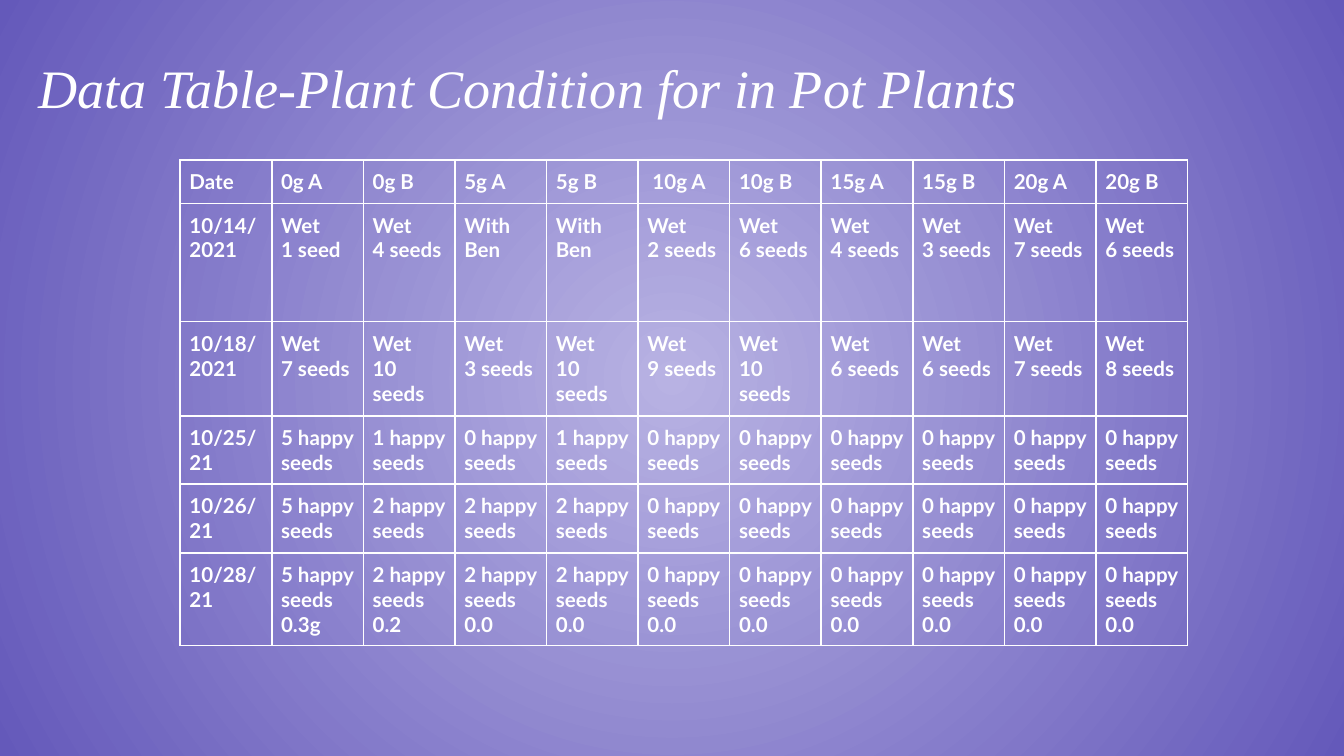
from dataclasses import dataclass

from pptx import Presentation
from pptx.dml.color import RGBColor
from pptx.enum.text import MSO_ANCHOR
from pptx.oxml import parse_xml
from pptx.oxml.ns import nsdecls
from pptx.slide import Slide
from pptx.table import _Cell
from pptx.text.text import TextFrame
from pptx.util import Inches, Pt

COLORS = {"text": "FFFFFF", "border": "FFFFFF", "center": "B8B2E3", "edge": "6459BA"}


@dataclass
class TableRow:
    height: float
    cells: list[str]


def observations(first: str, counts: list[int]) -> list[str]:
    return [first] + [f"{count} happy seeds" for count in counts]


def wet(count: str) -> str:
    return f"Wet\n{count}"


LAST_COUNTS = [5, 2, 2, 2] + [0] * 6
MASSES = ["0.3g", "0.2"] + ["0.0"] * 8

ROWS = [
    TableRow(0.32, ["Date", "0g A", "0g B", "5g A", "5g B", " 10g A",
                    "10g B", "15g A", "15g B", "20g A", "20g B"]),
    TableRow(0.88, ["10/14/2021", wet("1 seed"), wet("4 seeds"), "With Ben", "With Ben"]
             + [wet(f"{count} seeds") for count in (2, 6, 4, 3, 7, 6)]),
    TableRow(0.70, ["10/18/\n2021"]
             + [wet(f"{count} seeds") for count in (7, 10, 3, 10, 9, 10, 6, 6, 7, 8)]),
    TableRow(0.51, observations("10/25/21", [5, 1, 0, 1] + [0] * 6)),
    TableRow(0.51, observations("10/26/21", LAST_COUNTS)),
    TableRow(0.69, ["10/28/21"] + [f"{count} happy seeds\n{mass}"
                                   for count, mass in zip(LAST_COUNTS, MASSES)]),
]


def write_text(frame: TextFrame, text: str, *, size: float, font: str,
               bold: bool = False, italic: bool = False) -> None:
    frame.text = text
    for paragraph in frame.paragraphs:
        for run in paragraph.runs:
            run.font.size = Pt(size)
            run.font.name = font
            run.font.bold = bold
            run.font.italic = italic
            run.font.color.rgb = RGBColor.from_string(COLORS["text"])


def set_background(slide: Slide) -> None:
    background = parse_xml(
        f'<p:bg {nsdecls("p", "a")}><p:bgPr><a:gradFill rotWithShape="1"><a:gsLst>'
        f'<a:gs pos="0"><a:srgbClr val="{COLORS["center"]}"/></a:gs>'
        f'<a:gs pos="100000"><a:srgbClr val="{COLORS["edge"]}"/></a:gs></a:gsLst>'
        '<a:path path="circle"><a:fillToRect l="50000" t="50000" r="50000" b="50000"/>'
        '</a:path></a:gradFill><a:effectLst/></p:bgPr></p:bg>')
    slide.element.cSld.insert(0, background)


def format_cell(cell: _Cell) -> None:
    cell.margin_left = cell.margin_right = Inches(0.07)
    cell.margin_top = cell.margin_bottom = Inches(0.07)
    cell.fill.background()
    properties = cell._tc.get_or_add_tcPr()
    # Borders come before the fill
    for index, side in enumerate(("lnL", "lnR", "lnT", "lnB")):
        properties.insert(index, parse_xml(
            f'<a:{side} {nsdecls("a")} w="{Pt(1)}"><a:solidFill>'
            f'<a:srgbClr val="{COLORS["border"]}"/></a:solidFill></a:{side}>'))


def add_title(slide: Slide, text: str) -> None:
    title = slide.shapes.add_textbox(Inches(0.19), Inches(0.05), Inches(9), Inches(0.94))
    frame = title.text_frame
    frame.word_wrap = True
    frame.vertical_anchor = MSO_ANCHOR.BOTTOM
    frame.margin_left = frame.margin_right = Inches(0.1)
    frame.margin_top = frame.margin_bottom = Inches(0.1)
    write_text(frame, text, size=29, font="Times New Roman", italic=True)


def add_data_table(slide: Slide, rows: list[TableRow]) -> None:
    width = Inches(7.5)
    column_count = len(rows[0].cells)
    height = Inches(sum(row.height for row in rows))
    table = slide.shapes.add_table(len(rows), column_count, Inches(1.34), Inches(1.19),
                                   width, height).table
    table.first_row = table.horz_banding = False
    for column in table.columns:
        column.width = width // column_count
    for row_index, row in enumerate(rows):
        table.rows[row_index].height = Inches(row.height)
        for column_index, text in enumerate(row.cells):
            cell = table.cell(row_index, column_index)
            format_cell(cell)
            write_text(cell.text_frame, text, size=11, font="Lato", bold=True)


def main() -> None:
    presentation = Presentation()
    # Widescreen, 16:9
    presentation.slide_width = Inches(10)
    presentation.slide_height = Inches(10) * 9 // 16
    slide = presentation.slides.add_slide(presentation.slide_layouts[6])
    set_background(slide)
    add_title(slide, "Data Table-Plant Condition for in Pot Plants")
    add_data_table(slide, ROWS)
    presentation.save("out.pptx")


if __name__ == "__main__":
    main()
